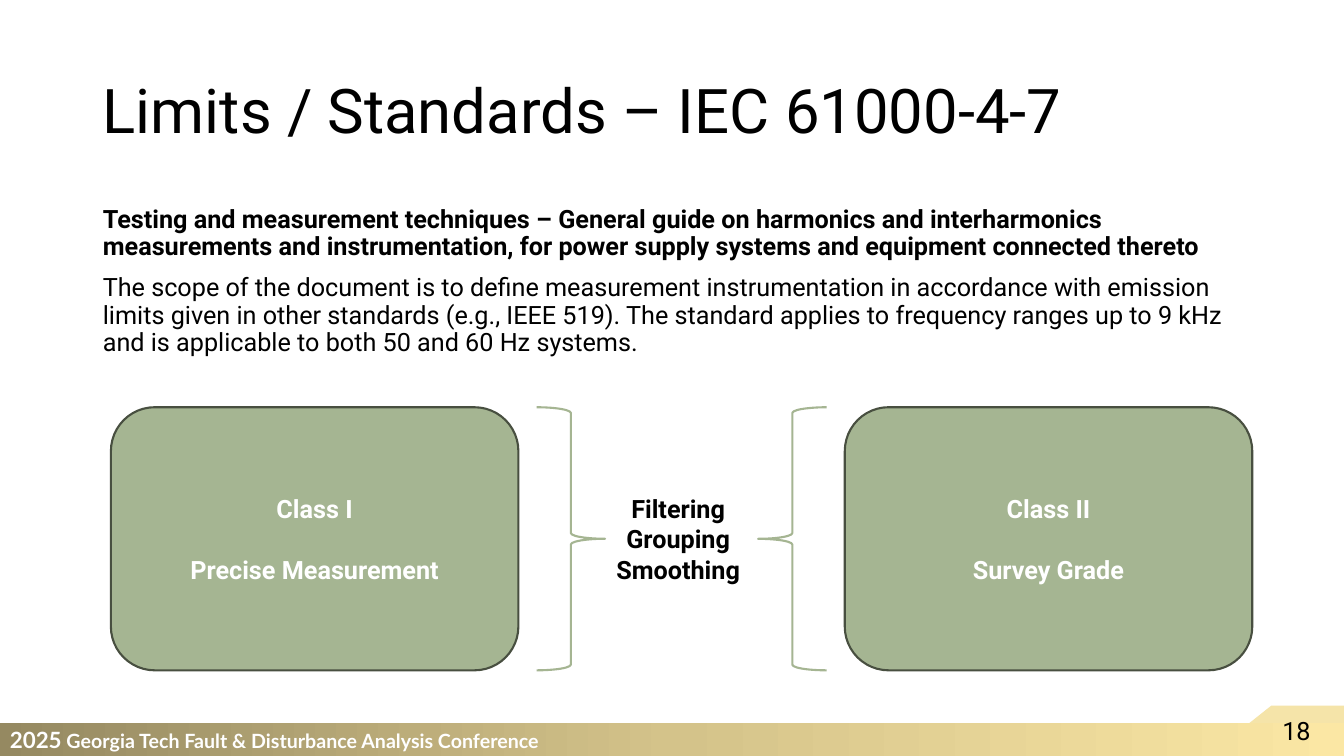
import copy
import pptx
import pptx.util
import pptx.dml.color
import pptx.enum.shapes
import pptx.enum.text
import pptx.oxml.ns
import lxml.etree

WIDE, HIGH = 13.33, 7.5
BLACK, WHITE, SAGE, MOSS = "000000", "FFFFFF", "A5B592", "484F40"
FORMS = pptx.enum.shapes.MSO_SHAPE
ALIGN = pptx.enum.text.PP_ALIGN
ANCHOR = pptx.enum.text.MSO_ANCHOR


def tint(code):
    """Turn a hex string into a colour."""
    return pptx.dml.color.RGBColor.from_string(code)


def share(box, x, y, w, h):
    """Return the part of a box given by shares of its size."""
    left, top, wide, high = box
    return left + x * wide, top + y * high, w * wide, h * high


def place(item, box):
    """Move a placeholder into a box."""
    item.left, item.top, item.width, item.height = map(pptx.util.Inches, box)


def write(par, runs, color=BLACK, align=ALIGN.LEFT):
    """Add runs of (text, size, bold, font) to a paragraph."""
    par.alignment = align
    for text, size, bold, face in runs:
        run = par.add_run()
        run.text = text
        run.font.size = pptx.util.Pt(size)
        run.font.bold = bold
        run.font.name = face
        run.font.color.rgb = tint(color)


def stack(frame, lines, color, gap=0):
    """Fill a frame with centred bold lines, set apart by a gap."""
    frame.word_wrap = True
    frame.vertical_anchor = ANCHOR.MIDDLE
    for i, line in enumerate(lines):
        par = frame.paragraphs[0] if i == 0 else frame.add_paragraph()
        if i and gap:
            par.space_before = pptx.util.Pt(gap)
        write(par, [(line, 18, True, "Roboto")], color, ALIGN.CENTER)


def form(slide, kind, box, fill=None, edge=None):
    """Add a preset shape with a plain fill and edge."""
    item = slide.shapes.add_shape(kind, *map(pptx.util.Inches, box))
    item.shadow.inherit = False
    if fill:
        item.fill.solid()
        item.fill.fore_color.rgb = tint(fill)
    else:
        item.fill.background()
    if edge:
        item.line.color.rgb = tint(edge)
        item.line.width = pptx.util.Pt(1.5)
    else:
        item.line.fill.background()
    return item


def footer(slide, box):
    """Draw the page tab, the gradient bar and the page number."""
    left, top, wide, high = box
    right, base = left + wide, top + high
    inch = pptx.util.Inches
    path = slide.shapes.build_freeform(inch(right - 0.72), inch(top))
    path.add_line_segments([(inch(x), inch(y)) for x, y in (
        (right - 1.35, base), (right, base), (right, top))])
    tab = path.convert_to_shape()
    tab.shadow.inherit = False
    tab.fill.solid()
    tab.fill.fore_color.rgb = tint("F5E4A9")
    tab.line.fill.background()

    bar = form(slide, FORMS.RECTANGLE, share(box, 0, 0.34, 1, 0.66))
    bar.fill.gradient()
    bar.fill.gradient_angle = 0
    stops = bar.element.xpath(".//a:gsLst")[0]
    stops.insert(1, copy.deepcopy(stops[0]))
    for stop, spot, code in zip(bar.fill.gradient_stops, (0, 0.5, 1),
                                ("958961", "D4C38A", "FBE7A4")):
        stop.position = spot
        stop.color.rgb = tint(code)
    bar.text_frame.vertical_anchor = ANCHOR.MIDDLE
    write(bar.text_frame.paragraphs[0], [
        ("2025", 16, True, "Lato"),
        (" Georgia Tech Fault & Disturbance Analysis Conference", 14, True, "Lato"),
    ], WHITE)

    page = slide.shapes.add_textbox(*map(inch, (right - 0.71, top + 0.05, 0.71, 0.4)))
    page.text_frame.word_wrap = True
    write(page.text_frame.paragraphs[0], [("18", 18, False, "Roboto")])


def heading(slide, box):
    """Set the slide title."""
    title = slide.shapes.title
    place(title, box)
    title.text_frame.vertical_anchor = ANCHOR.MIDDLE
    par = title.text_frame.paragraphs[0]
    par.line_spacing = 0.9
    write(par, [("Limits / Standards – IEC 61000-4-7", 44, False, "Roboto")])


def scope(slide, box):
    """Set the name of the standard and its scope."""
    body = slide.placeholders[1]
    place(body, box)
    frame = body.text_frame
    frame.auto_size = pptx.enum.text.MSO_AUTO_SIZE.NONE
    texts = (
        "Testing and measurement techniques – General guide on harmonics and "
        "interharmonics measurements and instrumentation, for power supply "
        "systems and equipment connected thereto",
        "The scope of the document is to define measurement instrumentation in "
        "accordance with emission limits given in other standards (e.g., IEEE 519). "
        "The standard applies to frequency ranges up to 9 kHz and is applicable to "
        "both 50 and 60 Hz systems.",
    )
    for i, text in enumerate(texts):
        par = frame.paragraphs[0] if i == 0 else frame.add_paragraph()
        props = par._p.get_or_add_pPr()
        props.set("marL", "0")
        props.set("indent", "0")
        lxml.etree.SubElement(props, pptx.oxml.ns.qn("a:buNone"))
        par.line_spacing = 0.9
        par.space_before = pptx.util.Pt(10 * i)
        write(par, [(text, 18, i == 0, "Roboto")])


def classes(slide, box):
    """Draw the two classes, the braces and the shared steps."""
    card, brace, inset = 0.357, 0.06, 0.373
    sides = (
        (0, inset, 0, ("Class I", "Precise Measurement")),
        (1 - card, 1 - inset - brace, 180, ("Class II", "Survey Grade")),
    )
    for x, curl, turn, lines in sides:
        item = form(slide, FORMS.ROUNDED_RECTANGLE, share(box, x, 0, card, 1), SAGE, MOSS)
        stack(item.text_frame, lines, WHITE, 22)
        hook = form(slide, FORMS.RIGHT_BRACE, share(box, curl, 0, brace, 1), edge=SAGE)
        hook.rotation = turn
    steps = slide.shapes.add_textbox(
        *map(pptx.util.Inches, share(box, inset, 0, 0.248, 1)))
    stack(steps.text_frame, ("Filtering", "Grouping", "Smoothing"), BLACK)


def main():
    """Build and save the slide."""
    deck = pptx.Presentation()
    deck.slide_width = pptx.util.Inches(WIDE)
    deck.slide_height = pptx.util.Inches(HIGH)
    slide = deck.slides.add_slide(deck.slide_layouts[1])
    footer(slide, (0, HIGH - 0.5, WIDE, 0.5))
    heading(slide, (0.92, 0.4, 11.5, 1.45))
    scope(slide, (0.92, 2, 11.5, 4.76))
    classes(slide, (1.1, 4.04, 11.32, 2.61))
    deck.save("out.pptx")


if __name__ == "__main__":
    main()
